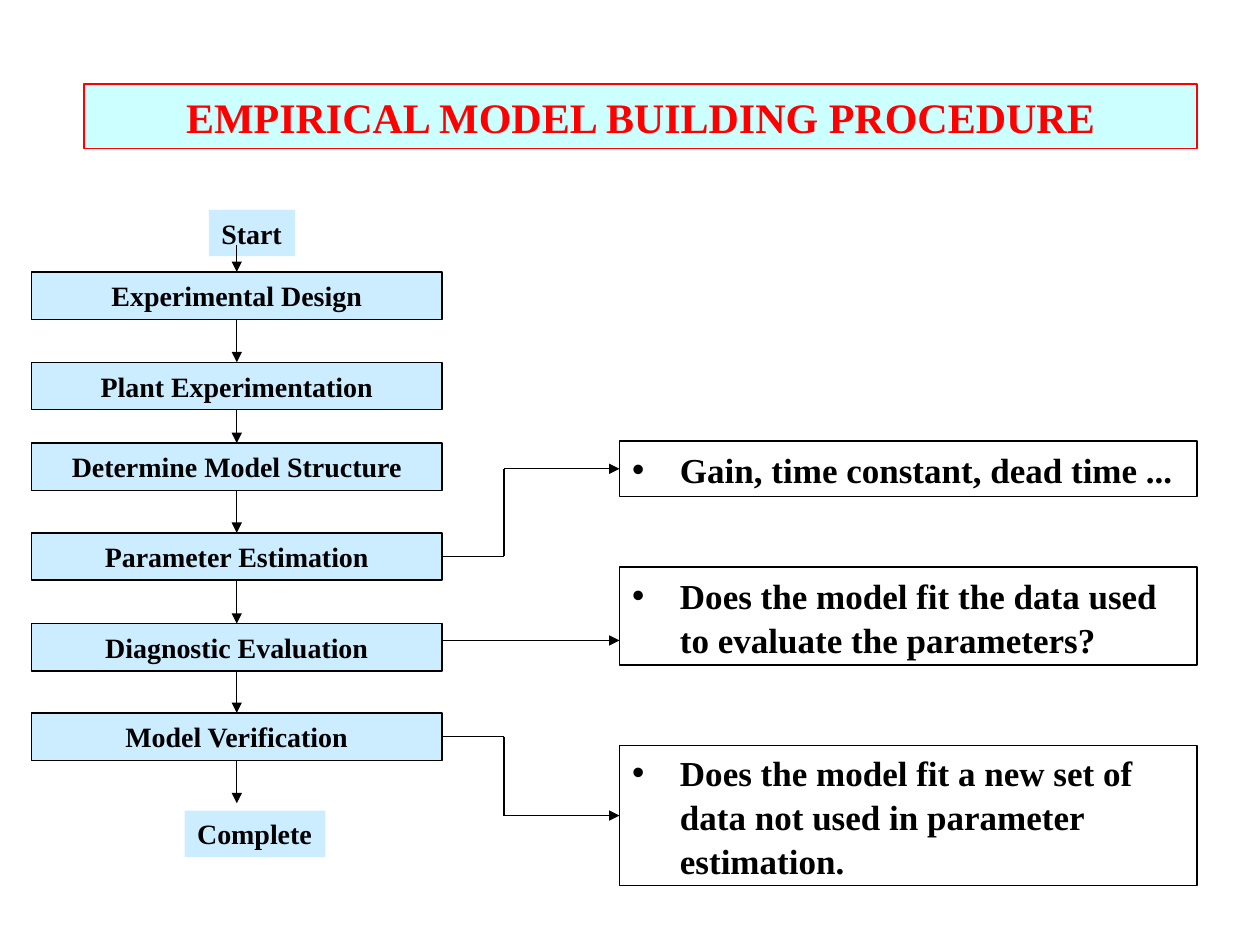
"""Build the empirical model building procedure slide on a grid of 120 columns by 90 rows."""
from lxml import etree
from pptx import Presentation, util as u
from pptx.dml.color import RGBColor
from pptx.enum import shapes, text
from pptx.oxml import ns

deck = Presentation()
deck.slide_width, deck.slide_height = u.Inches(10), u.Inches(7.5)
CELL = deck.slide_width / 120
BLACK, RED, PALE_BLUE, PALE_CYAN = "000000", "FF0000", "CCECFF", "CCFFFF"
page = deck.slides.add_slide(deck.slide_layouts.get_by_name("Comparison"))
title, *bodies, spare = page.placeholders
spare.element.getparent().remove(spare.element)


def dress(box, place, words, size, color=BLACK, fill=None, line=BLACK,
          align=text.PP_ALIGN.CENTER, wrap=True):
    """Place a box and format its outline and text."""
    for name, cells in zip(("left", "top", "width", "height"), place):
        setattr(box, name, round(cells * CELL))
    if fill:
        box.fill.solid()
        box.fill.fore_color.rgb = RGBColor.from_string(fill)
    if line:
        box.line.color.rgb = RGBColor.from_string(line)
        box.line.width = u.Pt(0.75)
    frame = box.text_frame
    frame.text = words
    frame_format = {"word_wrap": wrap, "auto_size": text.MSO_AUTO_SIZE.NONE,
                    "vertical_anchor": text.MSO_ANCHOR.MIDDLE}
    for name, value in frame_format.items():
        setattr(frame, name, value)
    para = frame.paragraphs[0]
    para.alignment, para.space_before = align, u.Pt(0)
    span = para.runs[0]
    for name, value in {"name": "Times New Roman", "size": u.Pt(size), "bold": True}.items():
        setattr(span.font, name, value)
    span.font.color.rgb = RGBColor.from_string(color)
    return box


def connect(start, end, source=None, target=None, arrow=True):
    """Draw a line between grid points, joined to (box, site) pairs where given."""
    points = [round(cells * CELL) for cells in (*start, *end)]
    line = page.shapes.add_connector(shapes.MSO_CONNECTOR.STRAIGHT, *points)
    if source:
        line.begin_connect(*source)
    if target:
        line.end_connect(*target)
    line.line.color.rgb = RGBColor.from_string(BLACK)
    line.line.width = u.Pt(0.75)
    if arrow:
        etree.SubElement(line.line._get_or_add_ln(), ns.qn("a:tailEnd"), type="triangle")
    etree.SubElement(line.element.spPr, ns.qn("a:effectLst"))


dress(title, (8, 8, 106, 6.15), "EMPIRICAL MODEL BUILDING PROCEDURE", 24, RED, PALE_CYAN, RED)

steps = []
for words, top in (("Experimental Design", 25.9), ("Plant Experimentation", 34.5),
                   ("Determine Model Structure", 42.2), ("Parameter Estimation", 50.75),
                   ("Diagnostic Evaluation", 59.4), ("Model Verification", 67.9)):
    box = page.shapes.add_shape(shapes.MSO_SHAPE.RECTANGLE, 0, 0, 0, 0)
    box.shadow.inherit = False
    steps.append(dress(box, (3, top, 39.1, 4.5), words, 16, fill=PALE_BLUE))

for words, place in (("Start", (19.9, 20, 8.2, 4.4)), ("Complete", (17.6, 77.2, 13.4, 4.4))):
    dress(page.shapes.add_textbox(0, 0, 0, 0), place, words, 16, fill=PALE_BLUE, line=None,
          align=text.PP_ALIGN.LEFT, wrap=False)

for body, words, top, height in zip(
        bodies,
        ("Gain, time constant, dead time ...",
         "Does the model fit the data used to evaluate the parameters?",
         "Does the model fit a new set of data not used in parameter estimation."),
        (42, 54, 71), (5.3, 9.35, 13.35)):
    dress(body, (59, top, 55, height), words, 20, align=text.PP_ALIGN.LEFT)
    para = body.text_frame.paragraphs[0]
    para.line_spacing = 1.05
    properties = para._p.get_or_add_pPr()
    properties.set("marL", str(u.Inches(0.38)))
    properties.set("indent", str(-u.Inches(0.38)))
    etree.SubElement(properties, ns.qn("a:buChar"), char="•")

middle = (steps[0].left + steps[0].width / 2) / CELL
connect((middle, 23.3), (middle, 25.9), target=(steps[0], 0))
for upper, lower in zip(steps, steps[1:]):
    connect((0, 0), (0, 0), (upper, 2), (lower, 0))
connect((middle, 72.4), (middle, 76.5), (steps[-1], 2))

for step, body in ((steps[3], bodies[0]), (steps[5], bodies[2])):
    start, end = [(box.top + box.height / 2) / CELL for box in (step, body)]
    connect((42, start), (48, start), source=(step, 3), arrow=False)
    connect((48, start), (48, end), arrow=False)
    connect((48, end), (59, end), target=(body, 1))
connect((42, 61), (59, 61))

deck.save("out.pptx")
